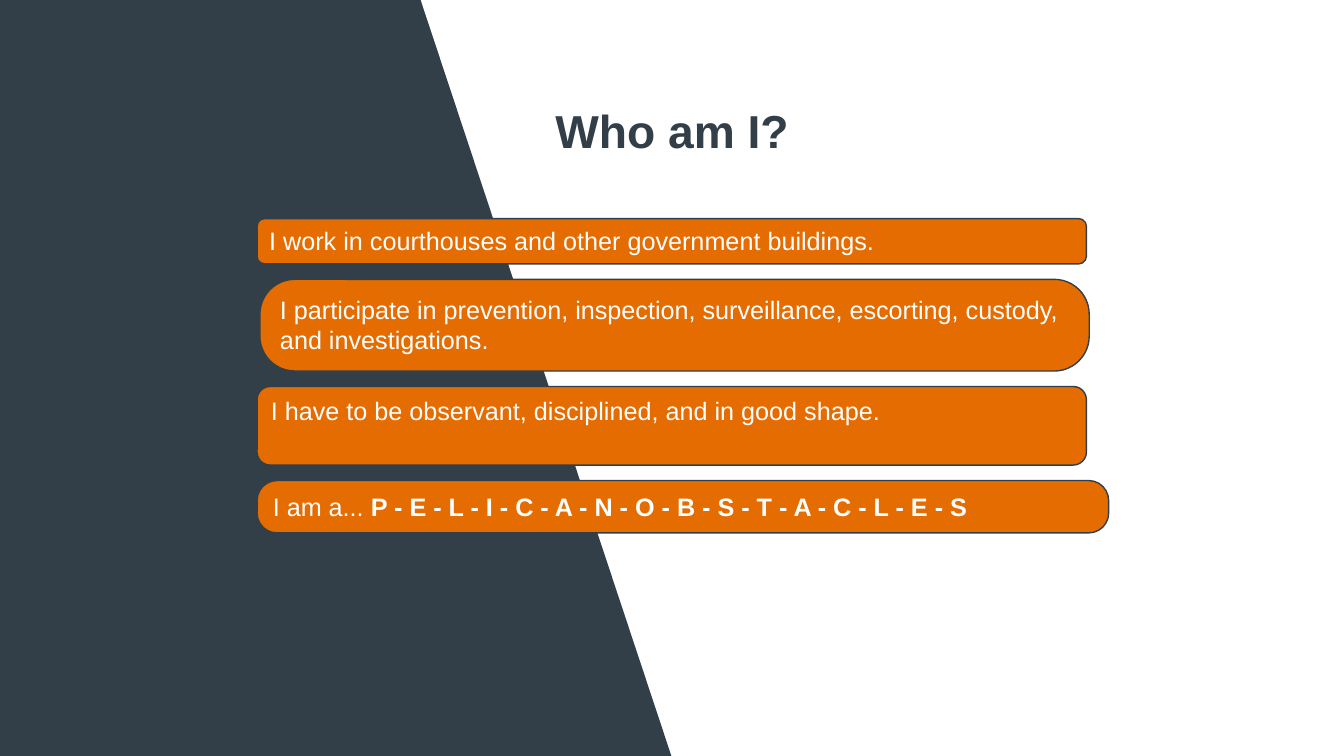
from pptx import Presentation
from pptx import util as u
from pptx.dml import color
from pptx.enum import shapes, text

COLORS = {"slate": "333F48", "orange": "E46C00", "white": "FFFFFF"}
CLUE_FONT = {"name": "Arial", "size": u.Pt(18), "bold": False}
TITLE_FONT = {"name": "Arial", "size": u.Pt(33), "bold": True}
FRAME = {"word_wrap": True, "auto_size": text.MSO_AUTO_SIZE.NONE}
CLUE_TOP = 5.51
CLUE_GAP = 0.39
CLUES = [
    (6.48, 20.9, 1.14, 0.167,
     [("I work in courthouses and other government buildings.", False)]),
    (6.55, 20.9, 2.31, 0.38,
     [("I participate in prevention, inspection, surveillance, escorting, "
       "custody, and investigations.", False)]),
    (6.48, 20.9, 1.98, 0.167,
     [("I have to be observant, disciplined, and in good shape.", False)]),
    (6.48, 21.46, 1.32, 0.38,
     [("I am a... ", False), (" - ".join("PELICANOBSTACLES"), True)]),
]


def rgb(name):
    return color.RGBColor.from_string(COLORS[name])


def apply(target, values):
    for key, value in values.items():
        setattr(target, key, value)


def paint(shape, fill):
    shape.shadow.inherit = False
    shape.fill.solid()
    shape.fill.fore_color.rgb = rgb(fill)


def add_side_panel(slide):
    corners = [(10.6, 0), (16.92, 19.05), (0, 19.05)]
    outline = slide.shapes.build_freeform(0, 0)
    outline.add_line_segments([(u.Cm(x), u.Cm(y)) for x, y in corners])
    panel = outline.convert_to_shape()
    paint(panel, "slate")
    panel.line.fill.background()


def set_title(slide, wording):
    title = slide.shapes.title
    apply(title, {"left": u.Cm(10.36), "top": u.Cm(2.44),
                  "width": u.Cm(13.16), "height": u.Cm(1.68)})
    apply(title.text_frame, FRAME)
    heading = title.text_frame.paragraphs[0]
    heading.alignment = text.PP_ALIGN.CENTER
    run = heading.add_run()
    run.text = wording
    apply(run.font, TITLE_FONT)
    run.font.color.rgb = rgb("slate")


def add_clue(slide, left, top, width, height, rounding, parts):
    clue = slide.shapes.add_shape(
        shapes.MSO_SHAPE.ROUNDED_RECTANGLE,
        u.Cm(left), u.Cm(top), u.Cm(width), u.Cm(height))
    clue.adjustments[0] = rounding
    paint(clue, "orange")
    clue.line.color.rgb = rgb("slate")
    clue.line.width = u.Pt(1)
    apply(clue.text_frame, {**FRAME, "vertical_anchor": text.MSO_ANCHOR.TOP})
    sentence = clue.text_frame.paragraphs[0]
    sentence.alignment = text.PP_ALIGN.LEFT
    for wording, bold in parts:
        run = sentence.add_run()
        run.text = wording
        apply(run.font, {**CLUE_FONT, "bold": bold})
        run.font.color.rgb = rgb("white")


def main():
    deck = Presentation()
    deck.slide_width, deck.slide_height = u.Cm(33.87), u.Cm(19.05)
    slide = deck.slides.add_slide(deck.slide_layouts.get_by_name("Title Only"))
    add_side_panel(slide)
    set_title(slide, "Who am I?")
    top = CLUE_TOP
    for left, width, height, rounding, parts in CLUES:
        add_clue(slide, left, top, width, height, rounding, parts)
        top += height + CLUE_GAP
    deck.save("out.pptx")


if __name__ == "__main__":
    main()
